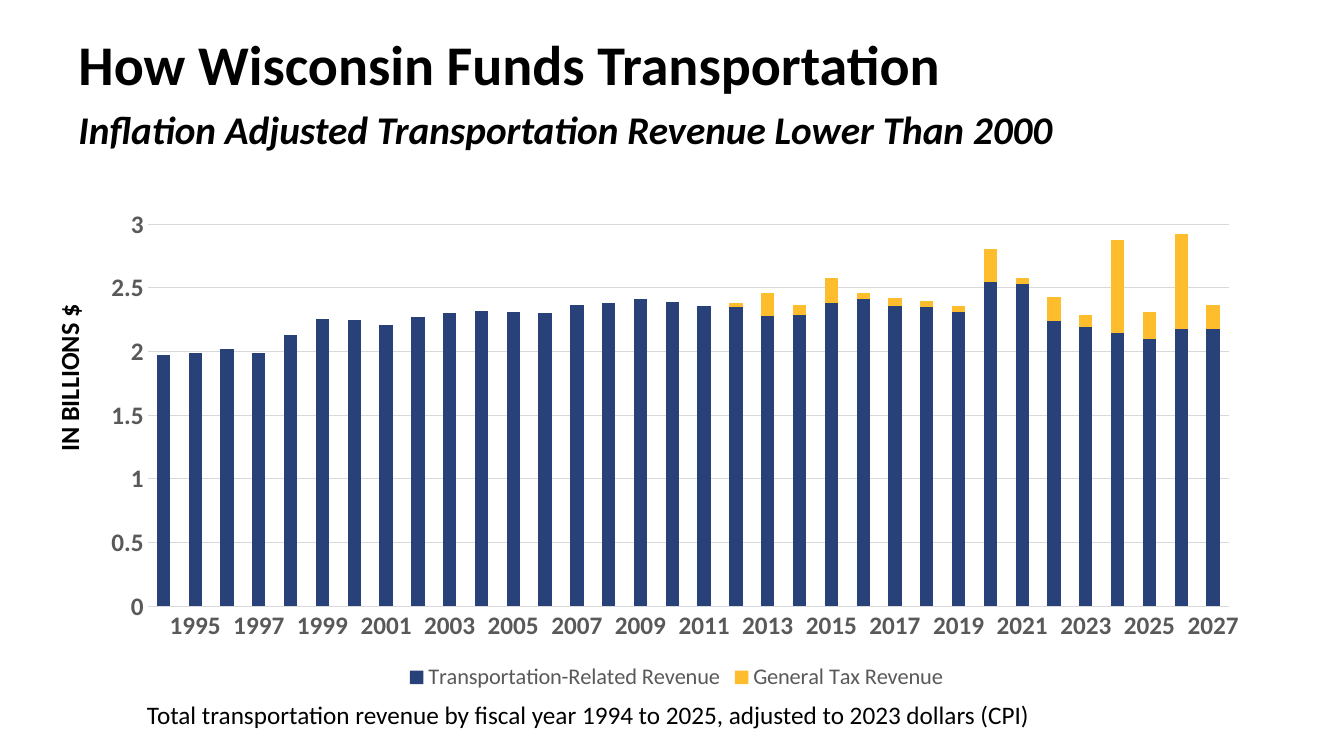
from lxml.etree import SubElement
from pptx import Presentation
from pptx.chart.data import CategoryChartData
from pptx.dml.color import RGBColor
from pptx.enum.chart import XL_CHART_TYPE as ChartType
from pptx.enum.chart import XL_LEGEND_POSITION as LegendPosition
from pptx.enum.chart import XL_TICK_MARK as TickMark
from pptx.enum.shapes import MSO_SHAPE as ShapeKind
from pptx.enum.text import MSO_ANCHOR as Anchor
from pptx.enum.text import PP_ALIGN as Align
from pptx.oxml.ns import qn
from pptx.util import Pt

EMU_PER_PX = 9144
FONT = "Calibri"
BLACK, GRAY, GRID, WHITE = "000000", "595959", "D9D9D9", "FFFFFF"
YEARS = range(1994, 2028)
RELATED_REVENUE = [
    1.97, 1.99, 2.02, 1.99, 2.13, 2.26, 2.25, 2.21, 2.27, 2.3, 2.32, 2.31,
    2.3, 2.37, 2.38, 2.41, 2.39, 2.36, 2.35, 2.28, 2.29, 2.38, 2.41, 2.36,
    2.35, 2.31, 2.55, 2.53, 2.24, 2.19, 2.15, 2.1, 2.18, 2.18,
]
GENERAL_TAX = [0] * 18 + [
    0.03, 0.18, 0.08, 0.2, 0.05, 0.06, 0.05, 0.05,
    0.26, 0.05, 0.19, 0.1, 0.73, 0.21, 0.74, 0.19,
]
SERIES = [
    ("Transportation-Related Revenue", RELATED_REVENUE, "294179"),
    ("General Tax Revenue", GENERAL_TAX, "FDBD2C"),
]


def px(*lengths):
    return [length * EMU_PER_PX for length in lengths]


def color(value):
    return RGBColor.from_string(value)


def format_font(font, size, fill=BLACK, bold=False, italic=False):
    font.name = FONT
    font.size = Pt(size)
    font.bold = bold
    font.italic = italic
    font.color.rgb = color(fill)


def add_run(paragraph, text, **text_format):
    run = paragraph.add_run()
    run.text = text
    format_font(run.font, **text_format)


def add_text_box(slide, box, anchor=Anchor.TOP):
    frame = slide.shapes.add_textbox(*px(*box)).text_frame
    frame.word_wrap = True
    frame.vertical_anchor = anchor
    return frame.paragraphs[0]


def add_title(slide):
    paragraph = add_text_box(slide, (68, 33, 1232, 125), Anchor.MIDDLE)
    paragraph.line_spacing = Pt(40)
    add_run(paragraph, "How Wisconsin Funds Transportation", size=40, bold=True)
    paragraph.add_line_break()
    add_run(paragraph, "Inflation Adjusted Transportation Revenue Lower Than 2000",
            size=28, bold=True, italic=True)


def add_axis_label(slide, text):
    shape = slide.shapes.add_shape(ShapeKind.RECTANGLE, *px(-21, 354, 178, 42))
    shape.rotation = 270
    shape.shadow.inherit = False
    shape.fill.solid()
    shape.fill.fore_color.rgb = color(WHITE)
    shape.line.fill.background()
    shape.text_frame.word_wrap = True
    paragraph = shape.text_frame.paragraphs[0]
    paragraph.alignment = Align.CENTER
    add_run(paragraph, text, size=18.7, bold=True)


def style_line(line, value):
    line.color.rgb = color(value)
    line.width = Pt(0.75)


def style_axis(axis):
    axis.major_tick_mark = axis.minor_tick_mark = TickMark.NONE
    format_font(axis.tick_labels.font, size=18, fill=GRAY, bold=True)


def place_plot(chart, **fractions):
    plot_area = chart.plots[0]._element.getparent()
    layout = plot_area.find(qn("c:layout"))
    if layout is None:
        layout = SubElement(plot_area, qn("c:layout"))
        plot_area.insert(0, layout)
    manual = SubElement(layout, qn("c:manualLayout"))
    settings = {"layoutTarget": "inner", "xMode": "edge", "yMode": "edge", **fractions}
    for name, value in settings.items():
        SubElement(manual, qn(f"c:{name}")).set("val", str(value))


def add_revenue_chart(slide):
    data = CategoryChartData()
    data.categories = [str(year) if year % 2 else "" for year in YEARS]
    for name, values, _ in SERIES:
        data.add_series(name, values)
    chart = slide.shapes.add_chart(
        ChartType.COLUMN_STACKED, *px(88, 198, 1166, 492), data).chart
    format_font(chart.font, size=10)
    chart.has_title = False

    plot = chart.plots[0]
    plot.gap_width = 140
    plot.overlap = 100
    plot.vary_by_categories = False
    for series, (_, _, fill) in zip(plot.series, SERIES):
        series.format.fill.solid()
        series.format.fill.fore_color.rgb = color(fill)
    place_plot(chart, x=0.05, y=0.05, w=0.92, h=0.77)

    style_axis(chart.category_axis)
    style_line(chart.category_axis.format.line, GRID)

    value_axis = chart.value_axis
    style_axis(value_axis)
    value_axis.minimum_scale = 0
    value_axis.maximum_scale = 3
    value_axis.major_unit = 0.5
    value_axis.format.line.fill.background()
    style_line(value_axis.major_gridlines.format.line, GRID)

    chart.has_legend = True
    chart.legend.position = LegendPosition.BOTTOM
    chart.legend.include_in_layout = False
    format_font(chart.legend.font, size=16, fill=GRAY)


def main():
    presentation = Presentation()
    presentation.slide_width, presentation.slide_height = px(1333, 750)
    slide = presentation.slides.add_slide(presentation.slide_layouts[6])
    add_title(slide)
    footnote = add_text_box(slide, (136, 689, 1103, 40))
    add_run(footnote, "Total transportation revenue by fiscal year 1994 to 2025, "
            "adjusted to 2023 dollars (CPI)", size=18)
    add_revenue_chart(slide)
    add_axis_label(slide, "IN BILLIONS $")
    presentation.save("out.pptx")


if __name__ == "__main__":
    main()
